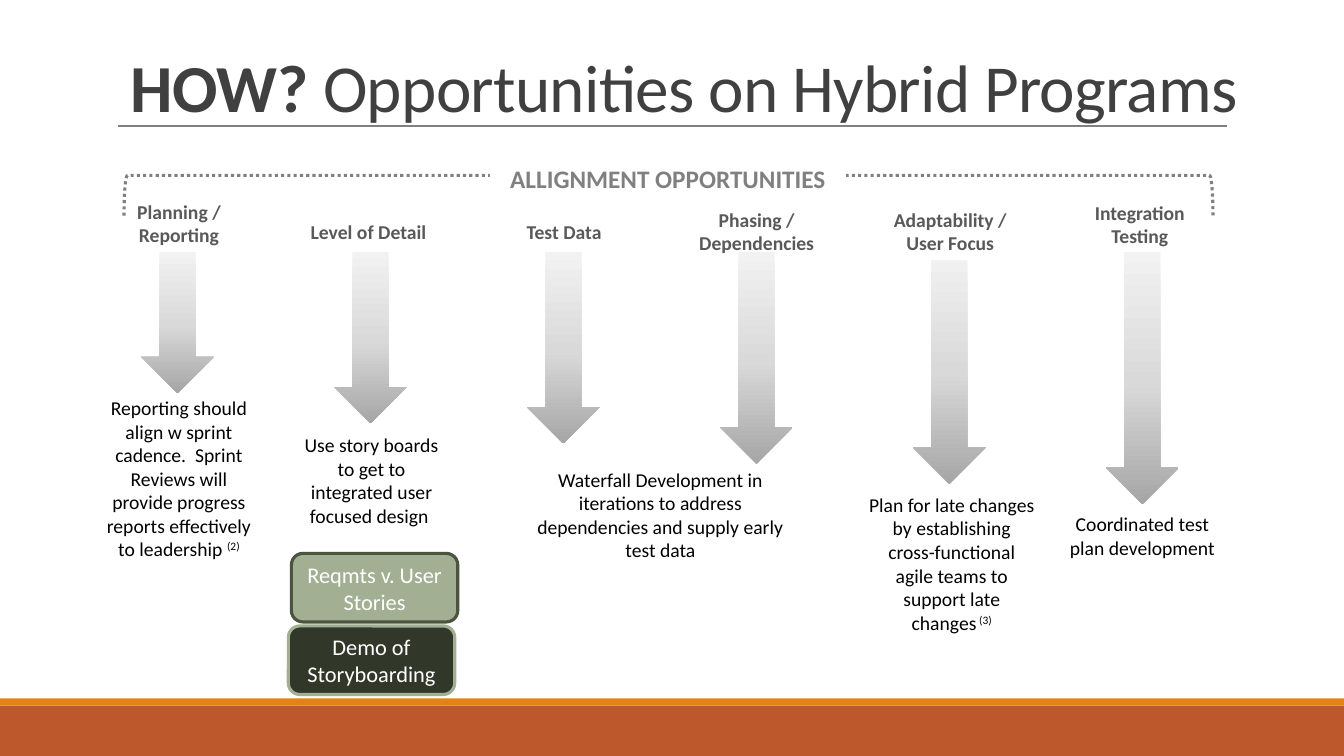
"""Build the slide on alignment opportunities in hybrid programs."""
import copy
from dataclasses import dataclass

import pptx
import pptx.dml.color
import pptx.enum.dml
import pptx.enum.shapes
import pptx.enum.text
import pptx.oxml.ns
import pptx.util

Inches = pptx.util.Inches
Pt = pptx.util.Pt
SHAPES = pptx.enum.shapes.MSO_SHAPE
ANCHOR = pptx.enum.text.MSO_ANCHOR
ALIGN = pptx.enum.text.PP_ALIGN
qn = pptx.oxml.ns.qn


@dataclass(frozen=True)
class Theme:
    """Hold the colours, font and type sizes of the slide."""
    font: str = "Calibri"
    white: str = "FFFFFF"
    body: str = "000000"
    title: str = "404040"
    label: str = "595959"
    rule: str = "808080"
    footer: str = "BD582C"
    footer_edge: str = "E48312"
    sage: str = "A2AF92"
    moss: str = "4A543E"
    forest: str = "313829"
    arrow_stops: tuple = ((0, "F2F2F2"), (0.52, "D9D9D9"), (1, "A6A6A6"))
    title_size: int = 48
    banner_size: int = 18
    button_size: int = 16
    text_size: int = 14


THEME = Theme()


def rgb(colour):
    """Turn a hex string into a colour value."""
    return pptx.dml.color.RGBColor.from_string(colour)


def apply_format(target, values):
    """Set each attribute named in a dict of format values."""
    for name, value in values.items():
        setattr(target, name, value)


def add_run(paragraph, text, size, colour, bold=False, **extras):
    """Add a run, with any further run properties given as XML attributes."""
    run = paragraph.add_run()
    run.text = text
    apply_format(run.font, {"name": THEME.font, "size": Pt(size), "bold": bold})
    run.font.color.rgb = rgb(colour)
    for name, value in extras.items():
        run.font._element.set(name, value)


def write_centred(shape, text, size, colour, bold=False, note="", anchor=ANCHOR.TOP):
    """Write one centred paragraph with an optional superscript note."""
    apply_format(shape.text_frame, {"word_wrap": True, "vertical_anchor": anchor})
    paragraph = shape.text_frame.paragraphs[0]
    paragraph.alignment = ALIGN.CENTER
    add_run(paragraph, text, size, colour, bold)
    if note:
        add_run(paragraph, note, size, colour, bold, baseline="30000")


def add_text(slide, box, text, colour, size=THEME.text_size, bold=False, note="", fill=None):
    """Add a centred text box, filled when it has to hide what lies behind."""
    block = slide.shapes.add_textbox(*map(Inches, box))
    if fill:
        block.fill.solid()
        block.fill.fore_color.rgb = rgb(fill)
    write_centred(block, text, size, colour, bold, note)


def add_plain_shape(slide, kind, box, fill=None, line=None, width=2.25):
    """Add a preset shape without shadow, with an optional fill and outline."""
    shape = slide.shapes.add_shape(kind, *map(Inches, box))
    shape.shadow.inherit = False
    if fill:
        shape.fill.solid()
        shape.fill.fore_color.rgb = rgb(fill)
    else:
        shape.fill.background()
    if line:
        shape.line.color.rgb = rgb(line)
        shape.line.width = Pt(width)
    else:
        shape.line.fill.background()
    return shape


def add_arrow(slide, left, height):
    """Add a down arrow that darkens towards its tip."""
    arrow = add_plain_shape(slide, SHAPES.DOWN_ARROW, (left, 2.5, 0.72, height))
    arrow.fill.gradient()
    arrow.fill.gradient_angle = 270
    stop_list = arrow._element.spPr.find(".//" + qn("a:gsLst"))
    stop_list.insert(1, copy.deepcopy(stop_list[0]))
    for stop, (position, colour) in zip(arrow.fill.gradient_stops, THEME.arrow_stops):
        stop.position = position
        stop.color.rgb = rgb(colour)


def add_button(slide, left, top, text, fill, line):
    """Add a rounded button with a contrasting outline."""
    button = add_plain_shape(slide, SHAPES.ROUNDED_RECTANGLE, (left, top, 1.65, 0.68), fill, line)
    write_centred(button, text, THEME.button_size, THEME.white, anchor=ANCHOR.MIDDLE)


def add_title(slide):
    """Add the title and the rule under it."""
    rule = slide.shapes.add_connector(
        pptx.enum.shapes.MSO_CONNECTOR.STRAIGHT, *map(Inches, (1.17, 1.25, 12.17, 1.25)))
    rule.line.color.rgb = rgb(THEME.rule)
    rule.line.width = Pt(1.5)
    rule._element.spPr.append(pptx.oxml.parse_xml(f"<a:effectLst {pptx.oxml.ns.nsdecls('a')}/>"))
    title = slide.shapes.add_textbox(*map(Inches, (1.2, 0.47, 11.35, 0.88)))
    apply_format(title.text_frame, {"word_wrap": True, "vertical_anchor": ANCHOR.MIDDLE})
    paragraph = title.text_frame.paragraphs[0]
    paragraph.line_spacing = 0.85
    for text, bold in (("HOW?", True), (" Opportunities on Hybrid Programs", False)):
        add_run(paragraph, text, THEME.title_size, THEME.title, bold, spc="-50")


def add_banner(slide):
    """Add the dotted bracket and the heading that interrupts it."""
    bracket = add_plain_shape(slide, SHAPES.LEFT_BRACKET, (6.43, -3.46, 0.4, 10.8), line=THEME.rule)
    bracket.rotation = 90
    bracket.line.dash_style = pptx.enum.dml.MSO_LINE.ROUND_DOT
    add_text(slide, (4.86, 1.57, 3.53, 0.4), "ALLIGNMENT OPPORTUNITIES", THEME.rule,
             THEME.banner_size, True, fill=THEME.white)


def main():
    """Build the slide and save it."""
    deck = pptx.Presentation()
    apply_format(deck, {"slide_width": Inches(13.33), "slide_height": Inches(7.5)})
    slide = deck.slides.add_slide(deck.slide_layouts[6])

    add_plain_shape(slide, SHAPES.RECTANGLE, (0, 7, 13.33, 0.5), THEME.footer)
    add_plain_shape(slide, SHAPES.RECTANGLE, (0, 6.93, 13.33, 0.07), THEME.footer_edge)
    add_title(slide)
    add_banner(slide)

    for column, arrow_height in enumerate((1.4, 1.7, 1.9, 2.1, 2.3, 2.5)):
        add_arrow(slide, 1.4 + 1.914 * column, arrow_height)

    opportunities = (
        ("Planning / Reporting", (0.95, 1.93, 1.65, 0.57), None),
        ("Level of Detail", (2.83, 2.13, 1.65, 0.34), None),
        ("Test Data", (4.89, 2.13, 1.41, 0.34), None),
        ("Phasing / Dependencies", (6.8, 2.01, 1.41, 0.57), None),
        ("Adaptability / User Focus", (8.72, 2.01, 1.41, 0.57), THEME.white),
        ("Integration Testing", (10.6, 1.94, 1.41, 0.57), None),
    )
    for text, box, fill in opportunities:
        add_text(slide, box, text, THEME.label, bold=True, fill=fill)

    actions = (
        ("Reporting should align w sprint cadence.  Sprint Reviews will provide progress "
         "reports effectively to leadership ", "(2)", (0.95, 3.88, 1.65, 1.75)),
        ("Use story boards to get to integrated user focused design ", "",
         (2.86, 4.25, 1.65, 1.04)),
        ("Waterfall Development in iterations to address dependencies and supply "
         "early test data", "", (5.23, 4.59, 2.64, 1.04)),
        ("Plan for late changes by establishing cross-functional agile teams to "
         "support late changes", " (3)", (8.52, 4.84, 1.84, 1.51)),
        ("Coordinated test plan development", "", (10.39, 5.03, 1.88, 0.57)),
    )
    for text, note, box in actions:
        add_text(slide, box, text, THEME.body, note=note)

    add_button(slide, 2.86, 6.21, "Demo of Storyboarding", THEME.forest, THEME.sage)
    add_button(slide, 2.89, 5.49, "Reqmts v. User Stories", THEME.sage, THEME.moss)
    deck.save("out.pptx")


if __name__ == "__main__":
    main()
